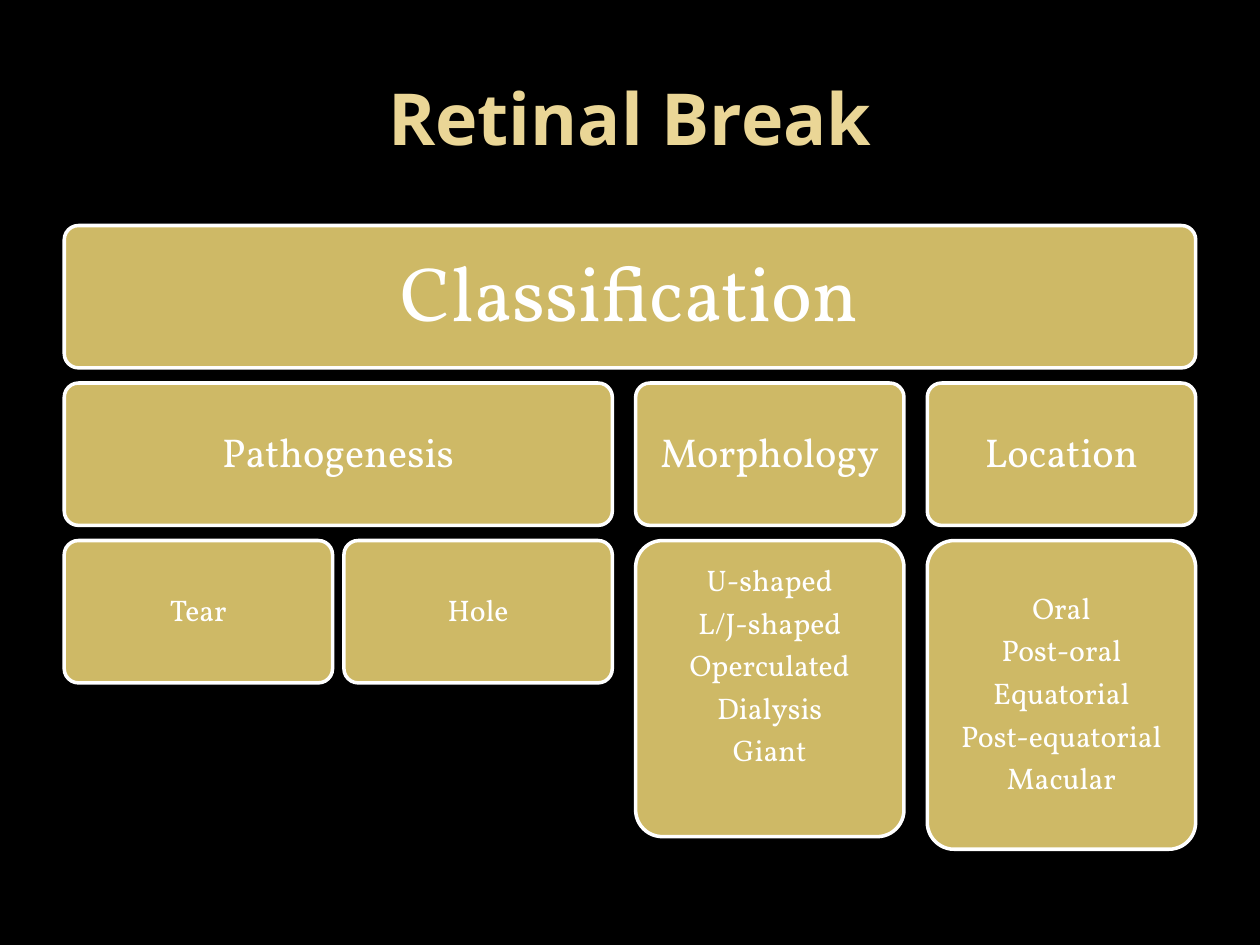
from lxml.etree import SubElement
from pptx import Presentation
from pptx.dml.color import RGBColor
from pptx.enum.shapes import MSO_SHAPE
from pptx.enum.text import MSO_ANCHOR, MSO_AUTO_SIZE, PP_ALIGN
from pptx.oxml.ns import qn
from pptx.util import Inches, Pt

BLACK = RGBColor(0x00, 0x00, 0x00)
WHITE = RGBColor(0xFF, 0xFF, 0xFF)
GOLD = RGBColor(0xCE, 0xB9, 0x66)
PALE_GOLD = RGBColor(0xEA, 0xD6, 0x96)

TITLE_ONLY = 5


class ClassificationSlide:
    TITLE_FONT = "Open Sans"
    BODY_FONT = "Vollkorn"
    LEFT, TOP = 0.51, 1.79
    COLUMN_WIDTH, COLUMN_STEP, GROUP_GAP = 2.13, 2.22, 0.095
    ROW_HEIGHT, ROW_STEP = 1.13, 1.25

    def __init__(self, presentation):
        self.slide = presentation.slides.add_slide(
            presentation.slide_layouts[TITLE_ONLY])
        background = self.slide.background.fill
        background.solid()
        background.fore_color.rgb = BLACK

    def column_left(self, column):
        """Columns 0 and 1 form one group; each later column starts its own."""
        return (self.LEFT + column * self.COLUMN_STEP
                + max(column - 1, 0) * self.GROUP_GAP)

    def add_run(self, paragraph, text, font_name, size, color, bold=False):
        paragraph.alignment = PP_ALIGN.CENTER
        run = paragraph.add_run()
        run.text = text
        run.font.name = font_name
        run.font.size = Pt(size)
        run.font.bold = bold
        run.font.color.rgb = color

    def set_spacing(self, paragraph):
        """Set tight lines, with a gap after that is a share of the text size."""
        paragraph.line_spacing = 0.9
        properties = paragraph._p.get_or_add_pPr()
        space_after = SubElement(properties, qn("a:spcAft"))
        SubElement(space_after, qn("a:spcPct")).set("val", "35000")

    def title(self, text):
        title = self.slide.shapes.title
        title.left, title.top = Inches(0.5), Inches(0.3)
        title.width, title.height = Inches(9), Inches(1.25)
        frame = title.text_frame
        frame.auto_size = MSO_AUTO_SIZE.NONE
        frame.vertical_anchor = MSO_ANCHOR.MIDDLE
        self.add_run(frame.paragraphs[0], text, self.TITLE_FONT, 41,
                     PALE_GOLD, bold=True)

    def box(self, lines, row, column, size, span=1, height=ROW_HEIGHT,
            inset=0.1, extra_bottom=0):
        left = self.column_left(column)
        right = self.column_left(column + span - 1) + self.COLUMN_WIDTH
        shape = self.slide.shapes.add_shape(
            MSO_SHAPE.ROUNDED_RECTANGLE, Inches(left),
            Inches(self.TOP + row * self.ROW_STEP),
            Inches(right - left), Inches(height))
        shape.adjustments[0] = 0.1
        shape.shadow.inherit = False
        shape.fill.solid()
        shape.fill.fore_color.rgb = GOLD
        shape.line.color.rgb = WHITE
        shape.line.width = Pt(2)

        frame = shape.text_frame
        frame.word_wrap = True
        frame.vertical_anchor = MSO_ANCHOR.MIDDLE
        frame.margin_left = frame.margin_right = frame.margin_top = Inches(inset)
        frame.margin_bottom = Inches(inset + extra_bottom)
        for index, line in enumerate(lines):
            paragraph = frame.add_paragraph() if index else frame.paragraphs[0]
            self.set_spacing(paragraph)
            self.add_run(paragraph, line, self.BODY_FONT, size, WHITE)


def main():
    presentation = Presentation()
    presentation.slide_width = Inches(10)
    presentation.slide_height = Inches(7.5)

    page = ClassificationSlide(presentation)
    page.title("Retinal Break")
    page.box(["Classification"], 0, 0, 44, span=4, inset=0.18)

    for heading, column, span in (("Pathogenesis", 0, 2),
                                  ("Morphology", 2, 1),
                                  ("Location", 3, 1)):
        page.box([heading], 1, column, 23, span=span)

    for column, kind in enumerate(("Tear", "Hole")):
        page.box([kind], 2, column, 17, inset=0.07)
    page.box(["U-shaped", "L/J-shaped", "Operculated", "Dialysis", "Giant"],
             2, 2, 17, height=2.35, inset=0.07, extra_bottom=0.34)
    page.box(["Oral", "Post-oral", "Equatorial", "Post-equatorial", "Macular"],
             2, 3, 17, height=2.45, inset=0.07)

    presentation.save("out.pptx")


if __name__ == "__main__":
    main()
